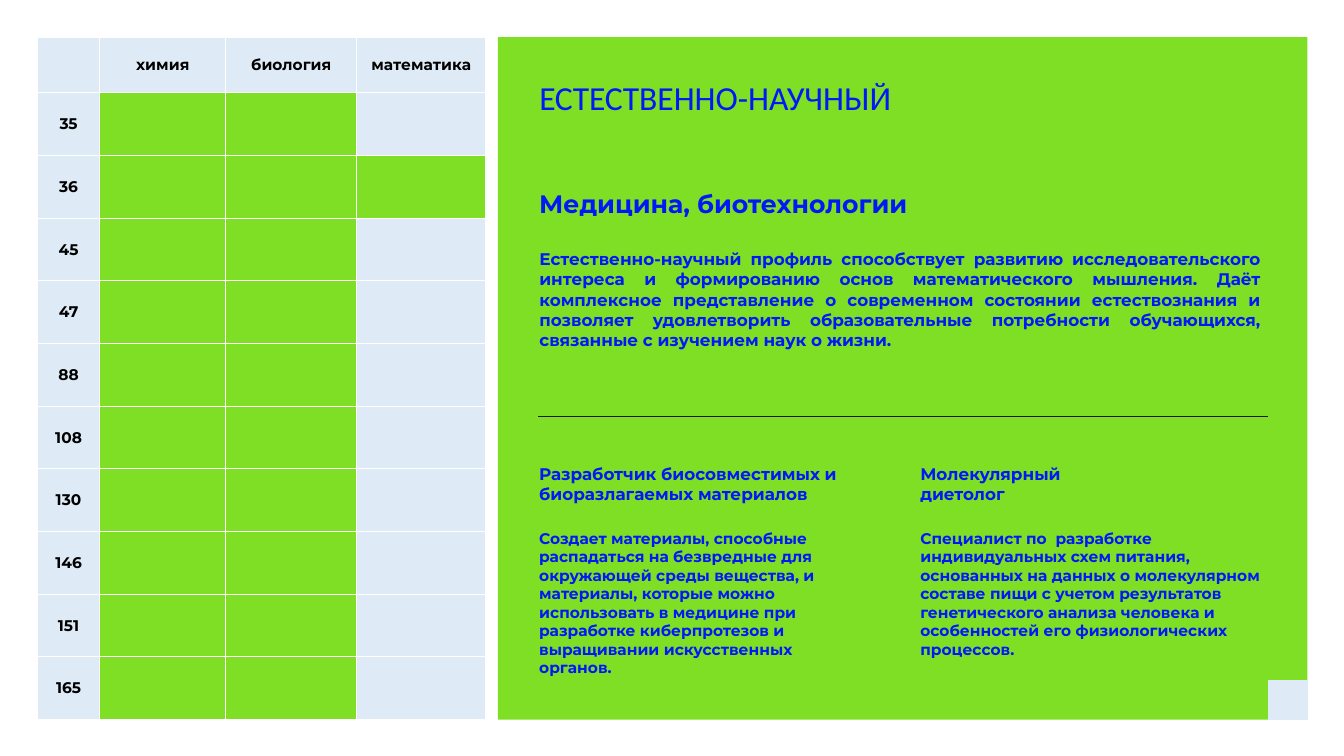
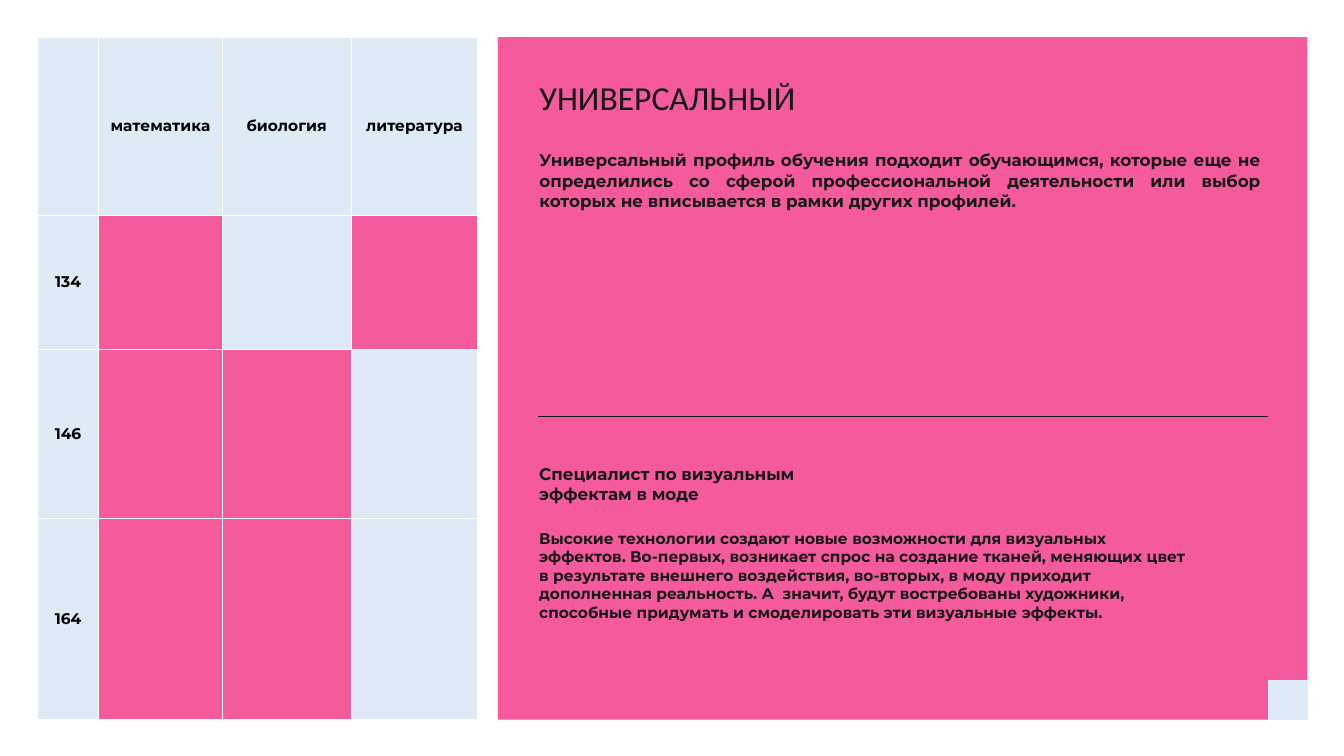
"""Build two slides on school profiles: a subject table beside a coloured panel."""
import dataclasses

import pptx
import pptx.dml.color
import pptx.enum.shapes
import pptx.enum.text
import pptx.oxml
import pptx.oxml.ns
import pptx.util

SHAPE = pptx.enum.shapes.MSO_SHAPE
ALIGN = pptx.enum.text.PP_ALIGN
ANCHOR = pptx.enum.text.MSO_ANCHOR
FIT = pptx.enum.text.MSO_AUTO_SIZE


@dataclasses.dataclass(frozen=True)
class Theme:
    """Slide size, colours, fonts and type sizes shared by the deck."""
    width: float = 13.33
    height: float = 7.5
    pale: str = "DEEBF7"
    green: str = "7EDF25"
    pink: str = "F45A9C"
    blue: str = "0017F8"
    dark: str = "181717"
    black: str = "000000"
    white: str = "FFFFFF"
    title_font: str = "Calibri"
    text_font: str = "Montserrat"
    title_size: int = 24
    subtitle_size: int = 18
    lead_size: int = 12
    detail_size: int = 11
    line_width: int = 1


@dataclasses.dataclass(frozen=True)
class Grid:
    """Shared positions as percentages of the slide's width or height."""
    margin: float = 2.78
    top: float = 4.93
    depth: float = 90.27
    panel: float = 37.05
    panel_width: float = 60.24
    text: float = 39.38
    second: float = 67.74
    text_width: float = 55.21
    title_top: float = 9.47
    subtitle_top: float = 24.27
    rule_left: float = 40.06
    rule_top: float = 55.07
    job_top: float = 60.67
    detail_top: float = 69.33
    two_lines: float = 6.67
    corner: float = 94.37
    corner_top: float = 90
    corner_width: float = 2.93
    corner_height: float = 5.2


THEME = Theme()
GRID = Grid()
COLUMN_WEIGHTS = (62, 125, 130, 128)


def across(share):
    """Turn a percentage of the slide's width into a length."""
    return pptx.util.Inches(THEME.width * share / 100)


def down(share):
    """Turn a percentage of the slide's height into a length."""
    return pptx.util.Inches(THEME.height * share / 100)


def place(left, top, width, height):
    """Turn four percentages into left, top, width and height."""
    return across(left), down(top), across(width), down(height)


def colour(value):
    """Return a colour object for a hexadecimal value."""
    return pptx.dml.color.RGBColor.from_string(value)


def write(frame, text, size, ink, font=THEME.text_font, bold=True, align=ALIGN.LEFT):
    """Write one formatted paragraph, with a run for each line."""
    para = frame.paragraphs[0]
    para.alignment = align
    para.space_before = pptx.util.Pt(0)
    for index, line in enumerate(text.split("\n")):
        if index:
            para.add_line_break()
        span = para.add_run()
        span.text = line
        span.font.name = font
        span.font.size = pptx.util.Pt(size)
        span.font.bold = bold
        span.font.color.rgb = colour(ink)
    return para


def add_block(page, kind, area, fill):
    """Add a plain filled shape."""
    block = page.shapes.add_shape(kind, *place(*area))
    block.shadow.inherit = False
    block.fill.solid()
    block.fill.fore_color.rgb = colour(fill)
    block.line.fill.background()
    return block


def add_rule(page):
    """Add the thin line that divides the panel."""
    rule = page.shapes.add_connector(
        pptx.enum.shapes.MSO_CONNECTOR.STRAIGHT,
        across(GRID.rule_left), down(GRID.rule_top),
        across(GRID.corner), down(GRID.rule_top))
    rule.line.color.rgb = colour(THEME.dark)
    rule.line.width = pptx.util.Pt(THEME.line_width)
    properties = rule.element.find(pptx.oxml.ns.qn("p:spPr"))
    properties.append(pptx.oxml.parse_xml(
        f'<a:effectLst {pptx.oxml.ns.nsdecls("a")}/>'))


def add_text(page, area, text, size, ink):
    """Add a wrapped text box."""
    box = page.shapes.add_textbox(*place(*area))
    box.text_frame.word_wrap = True
    box.text_frame.auto_size = FIT.SHAPE_TO_FIT_TEXT
    write(box.text_frame, text, size, ink)


def move_placeholder(box, area):
    """Move a placeholder and start its text at the top."""
    box.left, box.top, box.width, box.height = place(*area)
    box.text_frame.vertical_anchor = ANCHOR.TOP
    box.text_frame.auto_size = FIT.NONE
    box.text_frame.word_wrap = True


def fill_title(page, text, ink):
    """Fill the title placeholder."""
    title = page.shapes.title
    move_placeholder(title, (GRID.text, GRID.title_top, GRID.text_width, GRID.two_lines))
    write(title.text_frame, text, THEME.title_size, ink, THEME.title_font, False)


def fill_lead(page, text, ink, top, height):
    """Fill the body placeholder with a justified, unbulleted paragraph."""
    body = page.placeholders[1]
    move_placeholder(body, (GRID.text, top, GRID.text_width, height))
    para = write(body.text_frame, text, THEME.lead_size, ink, align=ALIGN.JUSTIFY)
    properties = para._p.get_or_add_pPr()
    properties.set("marL", "0")
    properties.set("indent", "0")
    properties.append(pptx.oxml.parse_xml(
        f'<a:buNone {pptx.oxml.ns.nsdecls("a")}/>'))


def format_cell(cell, fill, text):
    """Fill a cell, draw its borders and centre its text."""
    cell.fill.solid()
    cell.fill.fore_color.rgb = colour(fill)
    cell.vertical_anchor = ANCHOR.MIDDLE
    width = pptx.util.Pt(THEME.line_width)
    properties = cell._tc.get_or_add_tcPr()
    for index, side in enumerate("LRTB"):
        properties.insert(index, pptx.oxml.parse_xml(
            f'<a:ln{side} {pptx.oxml.ns.nsdecls("a")} w="{width}"><a:solidFill>'
            f'<a:srgbClr val="{THEME.white}"/></a:solidFill></a:ln{side}>'))
    if text:
        write(cell.text_frame, text, THEME.detail_size, THEME.black, align=ALIGN.CENTER)


def add_subject_table(page, width, subjects, schools, row_weights, accent):
    """Add a table whose marked cells show the subjects of each school."""
    frame = page.shapes.add_table(
        len(schools) + 1, len(subjects) + 1,
        *place(GRID.margin, GRID.top, width, GRID.depth))
    table = frame.table
    table.first_row = table.horz_banding = False
    for column, weight in zip(table.columns, COLUMN_WEIGHTS):
        column.width = across(width * weight / sum(COLUMN_WEIGHTS))
    for row, weight in zip(table.rows, row_weights):
        row.height = down(GRID.depth * weight / sum(row_weights))
    for index, text in enumerate(("", *subjects)):
        format_cell(table.cell(0, index), THEME.pale, text)
    for row, (school, taught) in enumerate(schools.items(), 1):
        format_cell(table.cell(row, 0), THEME.pale, school)
        for column, subject in enumerate(subjects, 1):
            fill = accent if subject in taught else THEME.pale
            format_cell(table.cell(row, column), fill, "")


def add_job(page, left, name, detail, widths, height, ink):
    """Add a profession's name and its description."""
    add_text(page, (left, GRID.job_top, widths[0], GRID.two_lines),
             name, THEME.lead_size, ink)
    add_text(page, (left, GRID.detail_top, widths[1], height),
             detail, THEME.detail_size, ink)


def add_page(deck, title, accent, ink):
    """Add a slide with its panel, title, dividing line and corner."""
    page = deck.slides.add_slide(deck.slide_layouts[1])
    panel = add_block(page, SHAPE.RECTANGLE,
                      (GRID.panel, GRID.top, GRID.panel_width, GRID.depth), accent)
    page.shapes.element.insert(2, panel.element)
    fill_title(page, title, ink)
    add_rule(page)
    add_block(page, SHAPE.ACTION_BUTTON_CUSTOM,
              (GRID.corner, GRID.corner_top, GRID.corner_width, GRID.corner_height),
              THEME.pale)
    return page


def build_science(deck):
    """Build the natural science slide."""
    accent, ink = THEME.green, THEME.blue
    page = add_page(deck, "ЕСТЕСТВЕННО-НАУЧНЫЙ", accent, ink)
    subjects = ("химия", "биология", "математика")
    schools = {school: subjects[:2] for school in
               "35 36 45 47 88 108 130 146 151 165".split()}
    schools["36"] = subjects
    add_subject_table(page, 33.38, subjects, schools,
                      (55, *[62] * len(schools)), accent)
    add_text(page, (GRID.text, GRID.subtitle_top, 40, 5.33),
             "Медицина, биотехнологии", THEME.subtitle_size, ink)
    fill_lead(page, "Естественно-научный профиль способствует развитию "
              "исследовательского интереса и формированию основ математического "
              "мышления. Даёт комплексное представление о современном состоянии "
              "естествознания и позволяет удовлетворить образовательные потребности "
              "обучающихся, связанные с изучением наук о жизни.", ink, 32.27, 14.8)
    add_job(page, GRID.text, "Разработчик биосовместимых и биоразлагаемых материалов",
            "Создает материалы, способные распадаться на безвредные для окружающей "
            "среды вещества, и материалы, которые можно использовать в медицине при "
            "разработке киберпротезов и выращивании искусственных органов.",
            (27.31, 25.58), 21.07, ink)
    add_job(page, GRID.second, "Молекулярный\nдиетолог",
            "Специалист по  разработке индивидуальных схем питания, основанных "
            "на данных о молекулярном составе пищи с учетом результатов "
            "генетического анализа человека и особенностей его физиологических "
            "процессов.", (26.86, 26.86), 21.07, ink)


def build_universal(deck):
    """Build the universal profile slide."""
    accent, ink = THEME.pink, THEME.dark
    page = add_page(deck, "УНИВЕРСАЛЬНЫЙ", accent, ink)
    subjects = ("математика", "биология", "литература")
    schools = {"134": subjects[::2], "146": subjects[:2], "164": subjects[:2]}
    add_subject_table(page, 32.78, subjects, schools, (177, 133, 168, 200), accent)
    fill_lead(page, "Универсальный профиль обучения подходит обучающимся, которые "
              "еще не определились со сферой профессиональной деятельности или выбор "
              "которых не вписывается в рамки других профилей.", ink, 19.2, 9.47)
    add_job(page, GRID.text, "Специалист по визуальным эффектам в моде",
            "Высокие технологии создают новые возможности для визуальных эффектов. "
            "Во-первых, возникает спрос на создание тканей, меняющих цвет "
            "в результате внешнего воздействия, во-вторых, в моду приходит "
            "дополненная реальность. А  значит, будут востребованы художники, "
            "способные придумать и смоделировать эти визуальные эффекты.",
            (27.31, 49.96), 13.73, ink)


def main():
    """Build and save the deck."""
    deck = pptx.Presentation()
    deck.slide_width = across(100)
    deck.slide_height = down(100)
    build_science(deck)
    build_universal(deck)
    deck.save("out.pptx")


if __name__ == "__main__":
    main()
